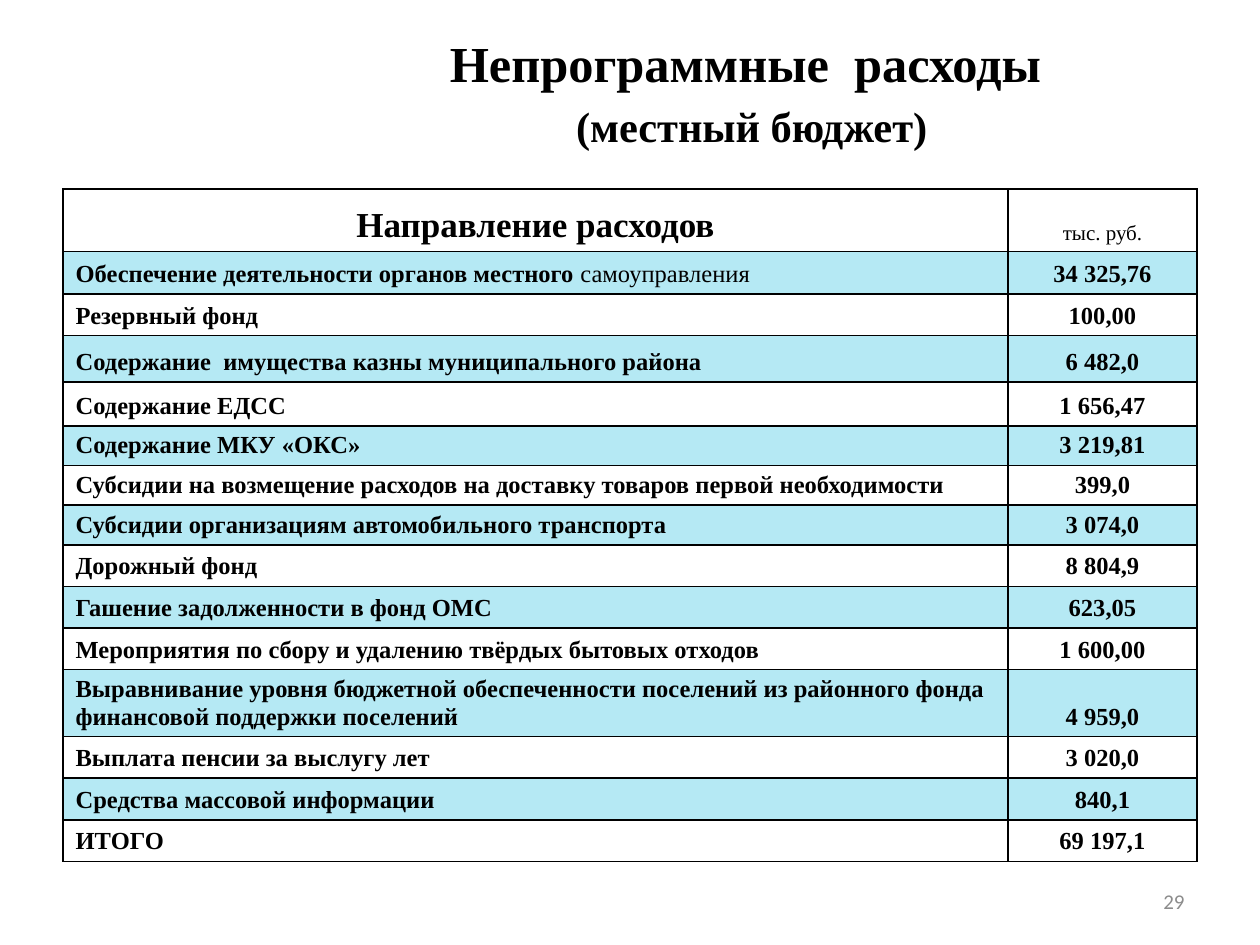
from lxml.etree import SubElement
from pptx import Presentation
from pptx.dml.color import RGBColor
from pptx.enum.text import MSO_ANCHOR, MSO_AUTO_SIZE, PP_ALIGN
from pptx.oxml.ns import qn
from pptx.util import Pt

BLACK = RGBColor(0, 0, 0)
WHITE = RGBColor(255, 255, 255)
CYAN = RGBColor(0xB5, 0xE9, 0xF4)
GRAY = RGBColor(0x8C, 0x8C, 0x8C)
SERIF = "Times New Roman"

# Row height, value, then the label's bold part and optional plain part
COSTS = [
    (24.5, "34 325,76", "Обеспечение деятельности органов местного ", "самоуправления"),
    (23.8, "100,00", "Резервный фонд"),
    (26.5, "6 482,0", "Содержание  имущества казны муниципального района"),
    (25, "1 656,47", "Содержание ЕДСС"),
    (22.7, "3 219,81", "Содержание МКУ «ОКС»"),
    (22.7, "399,0", "Субсидии на возмещение расходов на доставку товаров первой необходимости"),
    (22.7, "3 074,0", "Субсидии организациям автомобильного транспорта"),
    (23.8, "8 804,9", "Дорожный фонд"),
    (23.8, "623,05", "Гашение задолженности в фонд ОМС"),
    (23.8, "1 600,00", "Мероприятия по сбору и удалению твёрдых бытовых отходов"),
    (38.2, "4 959,0", "Выравнивание уровня бюджетной обеспеченности поселений "
                      "из районного фонда финансовой поддержки поселений"),
    (23.8, "3 020,0", "Выплата пенсии за выслугу лет"),
    (23.8, "840,1", "Средства массовой информации"),
    (23.8, "69 197,1", "ИТОГО"),
]


def add_run(para, text, size, bold=True, color=BLACK, face=SERIF):
    run = para.add_run()
    run.text = text
    font = run.font
    font.size, font.bold, font.name = Pt(size), bold, face
    font.color.rgb = color


def add_break(para, size):
    """Break the line, with the break set in the size of the text around it."""
    para.add_line_break()
    props = SubElement(para._p[-1], qn("a:rPr"), sz=str(round(size * 100)), b="1")
    SubElement(props, qn("a:latin"), typeface=SERIF)


def place(shape, box):
    shape.left, shape.top, shape.width, shape.height = map(Pt, box)


def add_edges(cell):
    """Give a cell thin black borders, ahead of its fill as the schema asks."""
    props = cell._tc.get_or_add_tcPr()
    for spot, side in enumerate(("lnL", "lnR", "lnT", "lnB")):
        line = props.makeelement(qn(f"a:{side}"), {"w": str(Pt(1))})
        fill = SubElement(line, qn("a:solidFill"))
        SubElement(fill, qn("a:srgbClr"), val=str(BLACK))
        props.insert(spot, line)


def fill_cell(cell, parts, size, color, align):
    """Write (text, bold) parts into a cell and style it."""
    cell.fill.solid()
    cell.fill.fore_color.rgb = color
    cell.vertical_anchor = MSO_ANCHOR.BOTTOM
    cell.margin_top = Pt(1)
    para = cell.text_frame.paragraphs[0]
    para.alignment = align
    for text, bold in parts:
        add_run(para, text, size, bold)
    add_edges(cell)


def add_title(slide, box):
    title = slide.shapes.title
    place(title, box)
    title.fill.solid()
    title.fill.fore_color.rgb = WHITE
    frame = title.text_frame
    frame.auto_size = MSO_AUTO_SIZE.NONE
    frame.vertical_anchor = MSO_ANCHOR.MIDDLE
    para = frame.paragraphs[0]
    para.alignment = PP_ALIGN.CENTER
    add_run(para, "Непрограммные  расходы", 28.8)
    add_break(para, 28.8)
    add_run(para, " ", 28.8)
    add_run(para, "(местный бюджет)", 24.3)


def add_costs(slide, box):
    left, top, width, height = map(Pt, box)
    table = slide.shapes.add_table(len(COSTS) + 1, 2, left, top, width, height).table
    table.columns[0].width = width * 5 // 6
    table.columns[1].width = width // 6

    # Header
    table.rows[0].height = Pt(35.6)
    fill_cell(table.cell(0, 0), [("Направление расходов", True)], 20, WHITE, PP_ALIGN.CENTER)
    fill_cell(table.cell(0, 1), [("тыс. руб.", False)], 12, WHITE, PP_ALIGN.CENTER)

    # Striped body
    for row, (tall, value, label, *plain) in enumerate(COSTS, 1):
        table.rows[row].height = Pt(tall)
        color = CYAN if row % 2 else WHITE
        parts = [(label, True)] + [(text, False) for text in plain]
        fill_cell(table.cell(row, 0), parts, 14, color, PP_ALIGN.LEFT)
        fill_cell(table.cell(row, 1), [(value, True)], 14, color, PP_ALIGN.CENTER)


def add_page(slide, box):
    frame = slide.shapes.add_textbox(*map(Pt, box)).text_frame
    frame.word_wrap = True
    frame.vertical_anchor = MSO_ANCHOR.MIDDLE
    para = frame.paragraphs[0]
    para.alignment = PP_ALIGN.RIGHT
    add_run(para, "29", 12, False, GRAY, "Calibri")


def main():
    deck = Presentation()
    deck.slide_width, deck.slide_height = Pt(720), Pt(540)
    slide = deck.slides.add_slide(deck.slide_layouts[5])
    add_title(slide, (168, 21.6, 516, 62.4))
    add_page(slide, (516, 500.5, 168, 28.75))
    add_costs(slide, (36, 108, 648, 384.5))
    deck.save("out.pptx")


if __name__ == "__main__":
    main()
